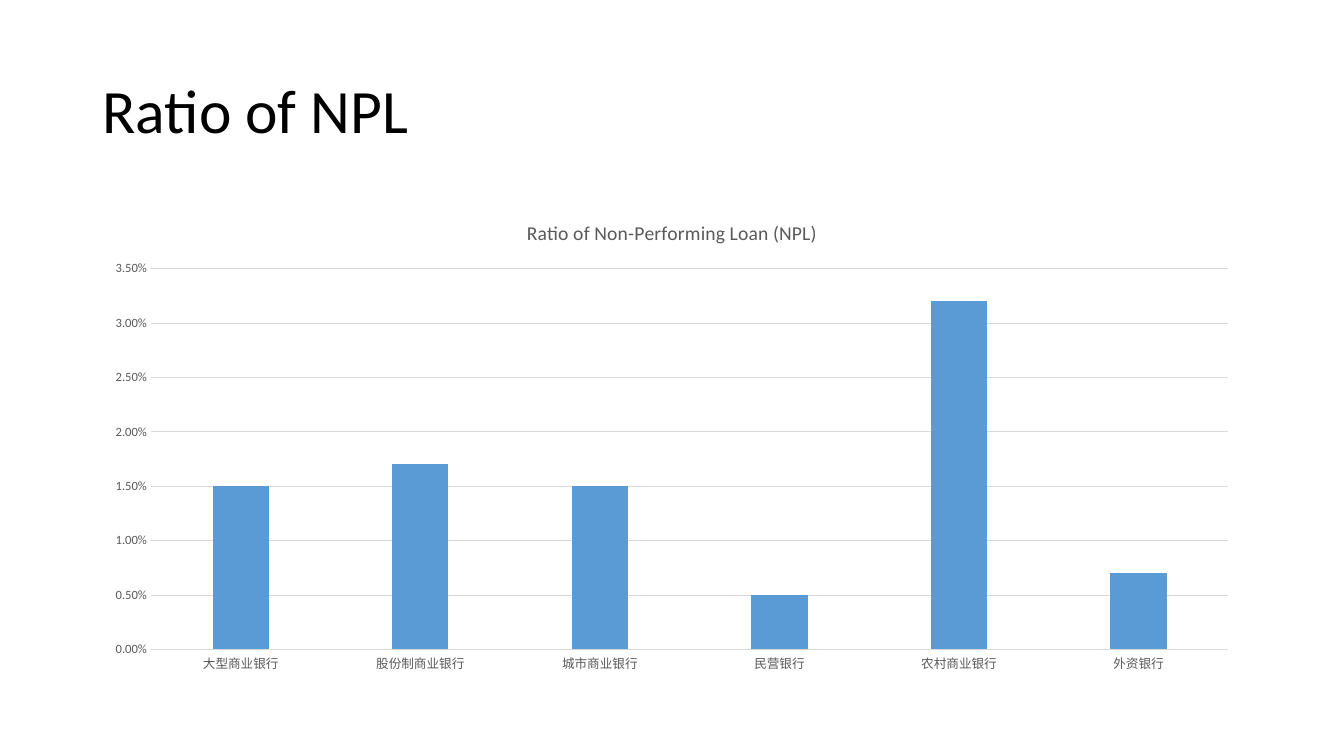
from pptx import Presentation
from pptx.chart.data import CategoryChartData
from pptx.dml.color import RGBColor
from pptx.enum import chart as ch, text
from pptx.util import Cm, Pt

BLACK = RGBColor(0x00, 0x00, 0x00)
GREY = RGBColor(0x59, 0x59, 0x59)
LIGHT = RGBColor(0xD9, 0xD9, 0xD9)
BLUE = RGBColor(0x5B, 0x9B, 0xD5)
FONT = "Calibri"
LEFT, WIDTH = Cm(2.33), Cm(29.21)

NPL_RATIOS = {
    "大型商业银行": 0.015,
    "股份制商业银行": 0.017,
    "城市商业银行": 0.015,
    "民营银行": 0.005,
    "农村商业银行": 0.032,
    "外资银行": 0.007,
}


def set_font(font, size, color):
    font.name = FONT
    font.size = Pt(size)
    font.bold = False
    font.color.rgb = color


def set_line(line, color):
    line.color.rgb = color
    line.width = Pt(0.75)


def add_title(s, words):
    sp = s.shapes.title
    sp.left, sp.top, sp.width, sp.height = LEFT, Cm(1.01), WIDTH, Cm(3.68)
    tf = sp.text_frame
    tf.text = words
    tf.word_wrap = True
    tf.auto_size = text.MSO_AUTO_SIZE.NONE
    tf.vertical_anchor = text.MSO_ANCHOR.MIDDLE
    p = tf.paragraphs[0]
    p.alignment = text.PP_ALIGN.LEFT
    p.line_spacing = 0.9
    set_font(p.runs[0].font, 44, BLACK)


def format_axes(chart):
    category, value = chart.category_axis, chart.value_axis
    for axis in (category, value):
        axis.major_tick_mark = axis.minor_tick_mark = ch.XL_TICK_MARK.NONE
        set_font(axis.tick_labels.font, 9, GREY)
    set_line(category.format.line, LIGHT)
    value.format.line.fill.background()
    value.has_major_gridlines = True
    set_line(value.major_gridlines.format.line, LIGHT)
    value.minimum_scale, value.maximum_scale = 0, 0.035
    value.major_unit = 0.005
    value.tick_labels.number_format = "0.00%"
    value.tick_labels.number_format_is_linked = False


def add_column_chart(s, heading, values):
    data = CategoryChartData(number_format="0.00%")
    data.categories = list(values)
    data.add_series("Series 1", list(values.values()))
    chart = s.shapes.add_chart(ch.XL_CHART_TYPE.COLUMN_CLUSTERED,
                               LEFT, Cm(5.06), WIDTH, Cm(12.1), data).chart
    set_font(chart.font, 10, BLACK)
    chart.has_legend = False

    # Chart title
    chart.has_title = True
    tf = chart.chart_title.text_frame
    tf.text = heading
    set_font(tf.paragraphs[0].runs[0].font, 14, GREY)
    chart.chart_title.include_in_layout = False

    # Columns
    plot = chart.plots[0]
    plot.gap_width, plot.overlap = 219, -27
    plot.vary_by_categories = False
    fill = plot.series[0].format.fill
    fill.solid()
    fill.fore_color.rgb = BLUE

    format_axes(chart)


def main():
    prs = Presentation()
    prs.slide_width, prs.slide_height = Cm(33.87), Cm(19.05)
    s = prs.slides.add_slide(prs.slide_layouts[5])
    add_title(s, "Ratio of NPL")
    add_column_chart(s, "Ratio of Non-Performing Loan (NPL)", NPL_RATIOS)
    prs.save("out.pptx")


if __name__ == "__main__":
    main()
